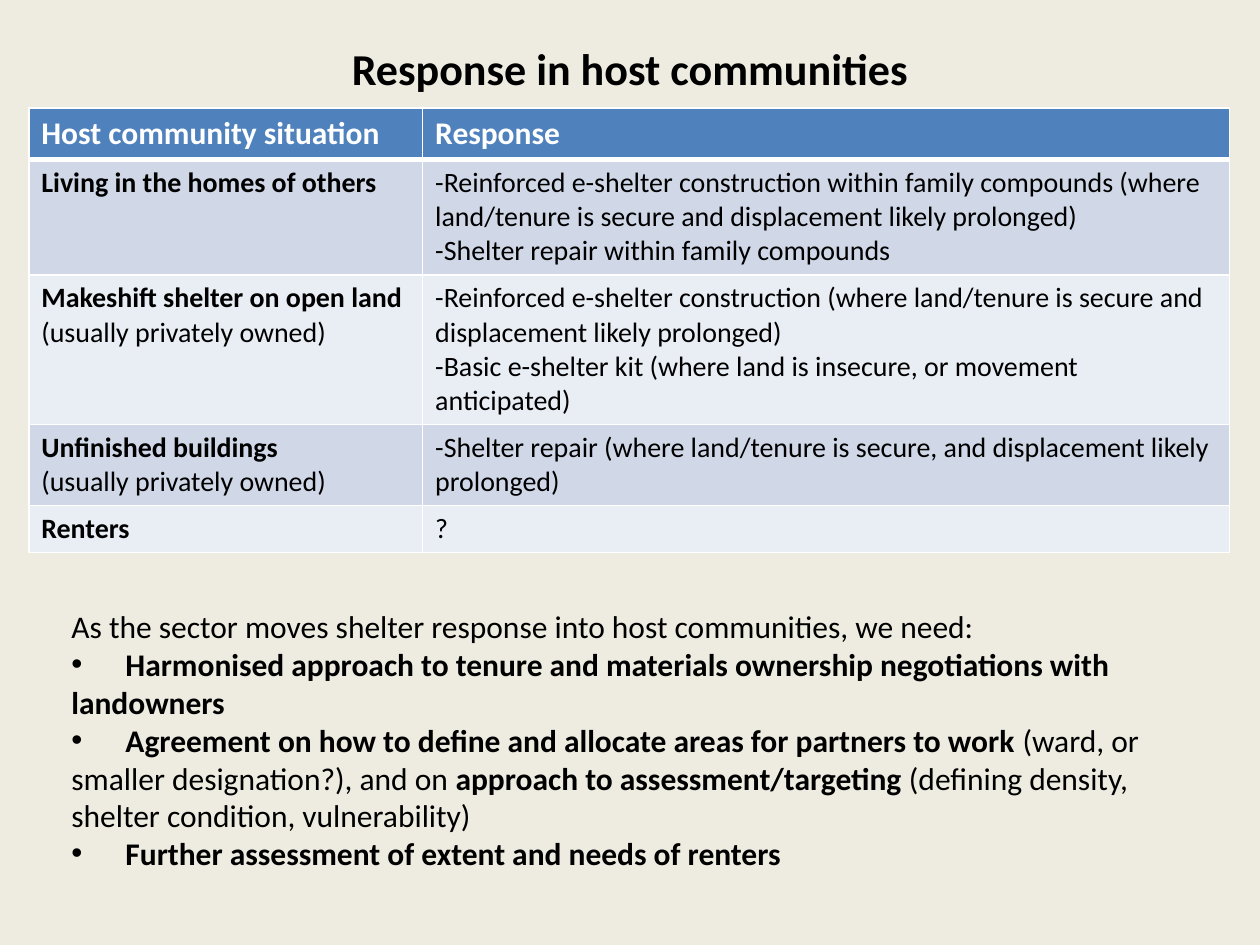
"""Build the slide on shelter response in host communities."""
from lxml import etree
from pptx import Presentation
from pptx.dml.color import RGBColor
from pptx.enum.text import MSO_ANCHOR, PP_ALIGN
from pptx.oxml.ns import qn
from pptx.util import Cm, Pt

CENTER, MIDDLE = PP_ALIGN.CENTER, MSO_ANCHOR.MIDDLE
BLACK = RGBColor(0x00, 0x00, 0x00)
WHITE = RGBColor(0xFF, 0xFF, 0xFF)
CREAM = RGBColor(0xEE, 0xEC, 0xE1)
BLUE = RGBColor(0x4F, 0x81, 0xBD)
BANDS = (RGBColor(0xE9, 0xED, 0xF4), RGBColor(0xD0, 0xD8, 0xE8))

TITLE = "Response in host communities"
HEADER = (["Host community situation"], ["Response"])
SITUATIONS = [
    (["Living in the homes of others"],
     ["-Reinforced e-shelter construction within family compounds (where land/tenure is secure "
      "and displacement likely prolonged)",
      "-Shelter repair within family compounds"]),
    (["Makeshift shelter on open land", "(usually privately owned)"],
     ["-Reinforced e-shelter construction (where land/tenure is secure and displacement likely "
      "prolonged)",
      "-Basic e-shelter kit (where land is insecure, or movement anticipated)"]),
    (["Unfinished buildings", "(usually privately owned)"],
     ["-Shelter repair (where land/tenure is secure, and displacement likely prolonged)"]),
    (["Renters"], ["?"]),
]
COL_WIDTHS = (7.94, 16.27)
ROW_HEIGHTS = (0.94, 2.33, 3.02, 1.63, 0.94)
INTRO = "As the sector moves shelter response into host communities, we need:"
NEEDS = [
    [("Harmonised approach to tenure and materials ownership negotiations with landowners", True)],
    [("Agreement on how to define and allocate areas for partners to work ", True),
     ("(ward, or smaller designation?), and on ", False),
     ("approach to assessment/targeting ", True),
     ("(defining density, shelter condition, vulnerability)", False)],
    [("Further assessment of extent and needs of renters", True)],
]
BULLET_GAP = Cm(1.09)


def add_run(p, text, size, bold=False, color=BLACK):
    r = p.add_run()
    r.text = text
    for name, value in {"name": "Calibri", "size": Pt(size), "bold": bold}.items():
        setattr(r.font, name, value)
    r.font.color.rgb = color


def paragraphs(tf, count):
    return [tf.paragraphs[0]] + [tf.add_paragraph() for _ in range(count - 1)]


def set_borders(cell, top, bottom):
    tc_pr = cell._tc.get_or_add_tcPr()
    for i, (side, width) in enumerate((("L", 1), ("R", 1), ("T", top), ("B", bottom))):
        ln = etree.Element(qn(f"a:ln{side}"), w=str(Pt(width)))
        fill = etree.SubElement(ln, qn("a:solidFill"))
        etree.SubElement(fill, qn("a:srgbClr"), val=str(WHITE))
        tc_pr.insert(i, ln)


def set_bullet(p):
    p_pr = p._p.get_or_add_pPr()
    p_pr.set("marL", "0")
    p_pr.set("indent", "0")
    etree.SubElement(p_pr, qn("a:buFont"), typeface="Arial")
    etree.SubElement(p_pr, qn("a:buChar"), char="•")
    tabs = etree.SubElement(p_pr, qn("a:tabLst"))
    etree.SubElement(tabs, qn("a:tab"), pos=str(BULLET_GAP), algn="l")


def add_title(s):
    title = s.shapes.title
    place = {"left": Cm(1.27), "top": Cm(0.76), "width": Cm(22.86), "height": Cm(1.22)}
    for name, value in place.items():
        setattr(title, name, value)
    tf = title.text_frame
    tf.vertical_anchor = MIDDLE
    p = tf.paragraphs[0]
    p.alignment = CENTER
    add_run(p, TITLE, 25.2, True)


def add_situations(s):
    rows = [HEADER] + SITUATIONS
    table = s.shapes.add_table(len(rows), len(COL_WIDTHS), Cm(0.58), Cm(2.18),
                               Cm(sum(COL_WIDTHS)), Cm(sum(ROW_HEIGHTS))).table
    table.horz_banding = False
    for col, width in zip(table.columns, COL_WIDTHS):
        col.width = Cm(width)
    for row, height in zip(table.rows, ROW_HEIGHTS):
        row.height = Cm(height)
    for i, row in enumerate(rows):
        header = i == 0
        for j, lines in enumerate(row):
            cell = table.cell(i, j)
            cell.fill.solid()
            cell.fill.fore_color.rgb = BLUE if header else BANDS[i % 2]
            set_borders(cell, 3 if i == 1 else 1, 3 if header else 1)
            for k, p in enumerate(paragraphs(cell.text_frame, len(lines))):
                bold = header or (j == 0 and k == 0)
                add_run(p, lines[k], 18 if header else 16, bold, WHITE if header else BLACK)


def add_needs(s):
    tf = s.shapes.add_textbox(Cm(1.19), Cm(12.12), Cm(23.01), Cm(6.4)).text_frame
    tf.word_wrap = True
    intro, *bullets = paragraphs(tf, len(NEEDS) + 1)
    add_run(intro, INTRO, 18)
    for p, runs in zip(bullets, NEEDS):
        set_bullet(p)
        add_run(p, "\t", 18, True)
        for text, bold in runs:
            add_run(p, text, 18, bold)


def main():
    prs = Presentation()
    prs.slide_width, prs.slide_height = Cm(25.4), Cm(19.05)
    s = prs.slides.add_slide(prs.slide_layouts.get_by_name("Title Only"))
    s.background.fill.solid()
    s.background.fill.fore_color.rgb = CREAM
    add_title(s)
    add_situations(s)
    add_needs(s)
    prs.save("out.pptx")


if __name__ == "__main__":
    main()
